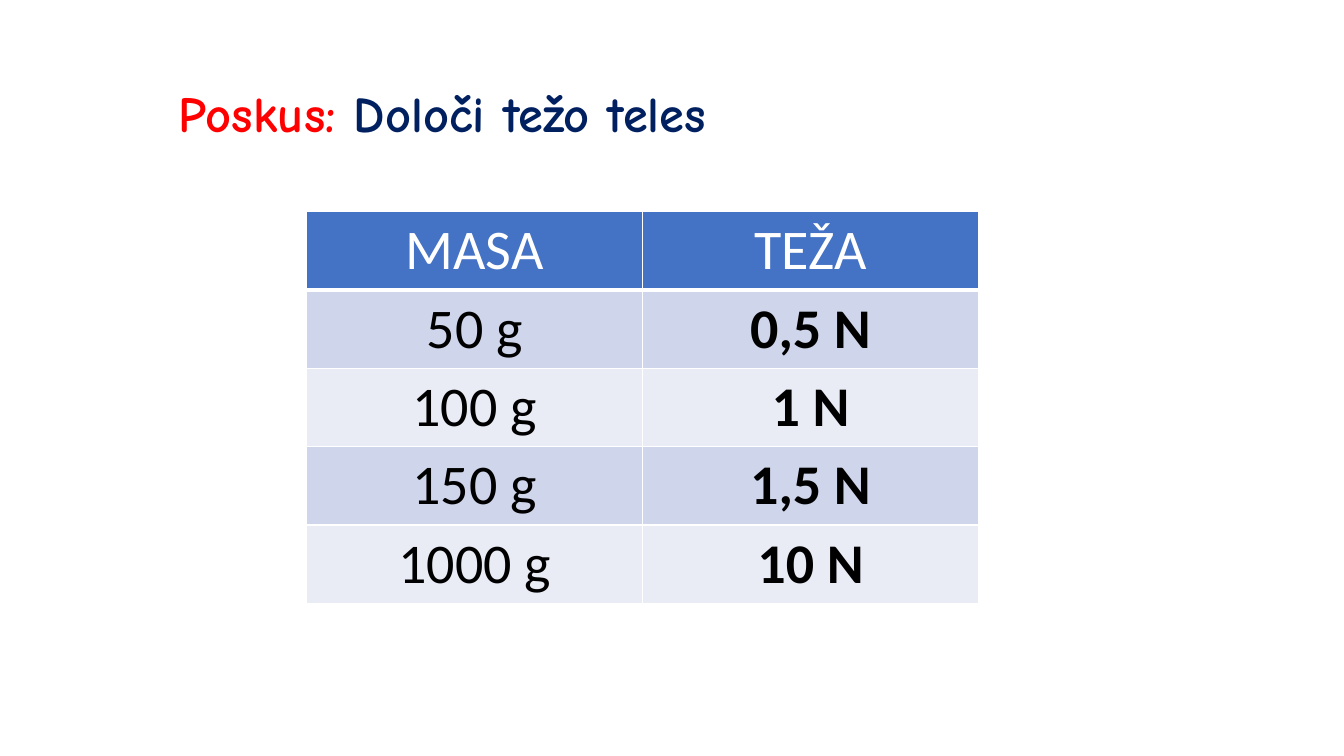
from dataclasses import dataclass

from lxml.etree import SubElement
from pptx import Presentation
from pptx.dml.color import RGBColor
from pptx.enum.text import MSO_ANCHOR, MSO_AUTO_SIZE, PP_ALIGN
from pptx.oxml.ns import qn
from pptx.util import Pt


@dataclass(frozen=True)
class Theme:
    title_font: str = "Comic Neue"
    table_font: str = "Calibri"
    title_size: int = 36
    table_size: int = 40
    red: str = "FF0000"
    navy: str = "002060"
    white: str = "FFFFFF"
    black: str = "000000"
    header: str = "4472C4"
    bands: tuple = ("CFD5EA", "E9EBF5")


class Deck:
    def __init__(self, theme):
        self.theme = theme
        self.prs = Presentation()
        self.prs.slide_width, self.prs.slide_height = Pt(960), Pt(540)
        self.s = self.prs.slides.add_slide(self.prs.slide_layouts[5])

    def run(self, p, text, color, **formats):
        r = p.add_run()
        r.text = text
        for name, value in formats.items():
            setattr(r.font, name, value)
        r.font.color.rgb = RGBColor.from_string(color)

    def title(self, parts, left, top, width, height):
        sp = self.s.shapes.title
        box = dict(left=left, top=top, width=width, height=height)
        for name, value in box.items():
            setattr(sp, name, Pt(value))
        tf = sp.text_frame
        formats = dict(word_wrap=True, auto_size=MSO_AUTO_SIZE.NONE,
                       vertical_anchor=MSO_ANCHOR.TOP)
        for name, value in formats.items():
            setattr(tf, name, value)
        p = tf.paragraphs[0]
        p.alignment = PP_ALIGN.LEFT
        for text, color in parts:
            self.run(p, text, color, name=self.theme.title_font,
                     size=Pt(self.theme.title_size), bold=True)

    def borders(self, cell, **widths):
        tcPr = cell._tc.get_or_add_tcPr()
        for side, width in widths.items():
            ln = SubElement(tcPr, qn(f"a:ln{side}"), w=str(Pt(width)))
            fill = SubElement(ln, qn("a:solidFill"))
            SubElement(fill, qn("a:srgbClr"), val=self.theme.white)

    def table(self, rows, left, top, col_width, row_height):
        t = self.theme
        n_rows, n_cols = len(rows), len(rows[0])
        table = self.s.shapes.add_table(
            n_rows, n_cols, Pt(left), Pt(top),
            Pt(col_width * n_cols), Pt(row_height * n_rows)).table
        table.horz_banding = False
        for i, row in enumerate(rows):
            is_header = i == 0
            fill = t.header if is_header else t.bands[(i - 1) % 2]
            for j, text in enumerate(row):
                cell = table.cell(i, j)
                self.borders(cell, L=1, R=1, T=1, B=3 if is_header else 1)
                cell.fill.solid()
                cell.fill.fore_color.rgb = RGBColor.from_string(fill)
                p = cell.text_frame.paragraphs[0]
                p.alignment = PP_ALIGN.CENTER
                self.run(p, text, t.white if is_header else t.black,
                         name=t.table_font, size=Pt(t.table_size),
                         bold=not is_header and j == 1)


def main():
    theme = Theme()
    deck = Deck(theme)

    # Heading
    deck.title([("Poskus: ", theme.red), ("Določi težo teles", theme.navy)],
               120, 55, 720, 138)

    # Mass and weight table
    deck.table([("MASA", "TEŽA"),
                ("50 g", "0,5 N"),
                ("100 g", "1 N"),
                ("150 g", "1,5 N"),
                ("1000 g", "10 N")],
               219, 151.2, 240, 55.2)

    deck.prs.save("out.pptx")


if __name__ == "__main__":
    main()
